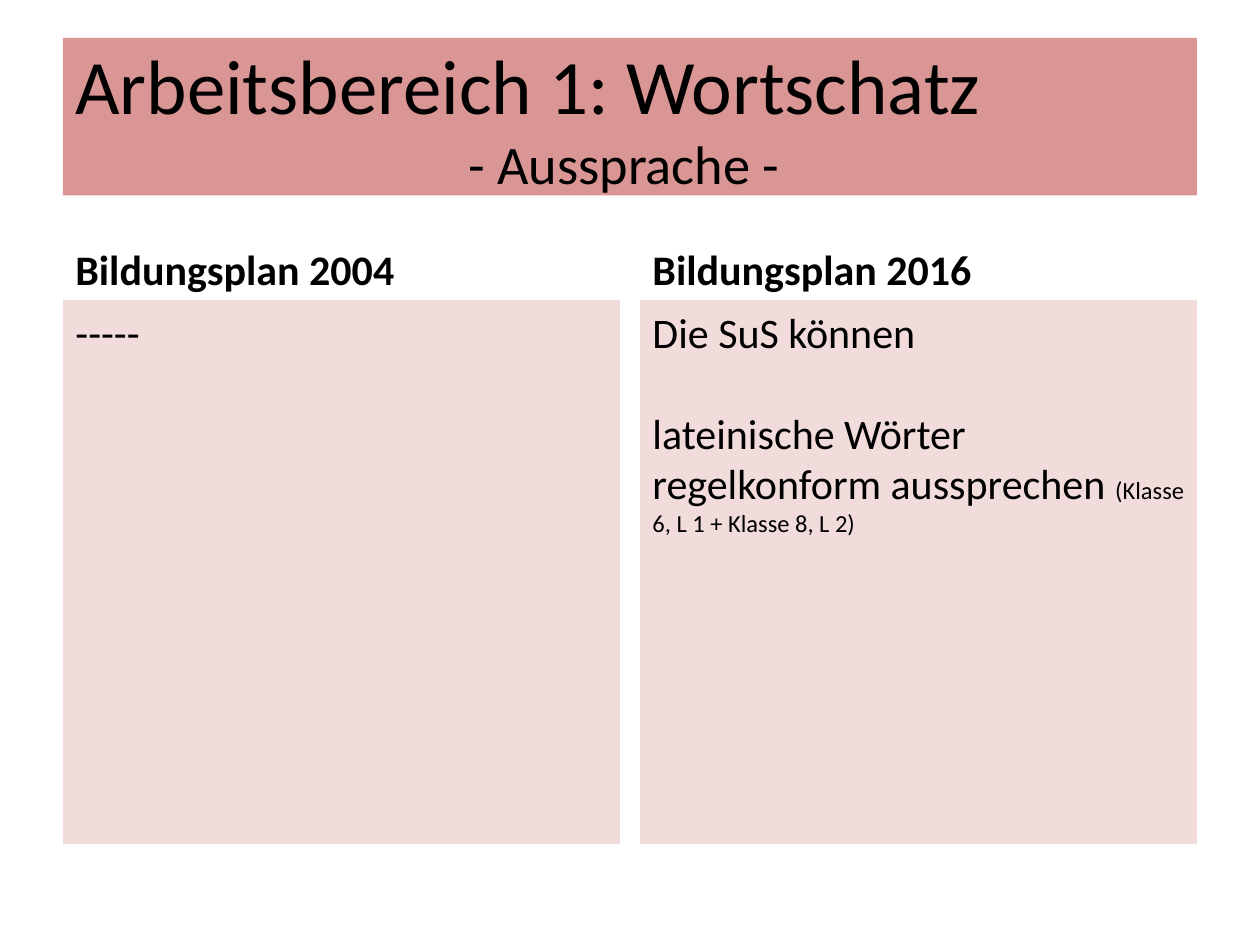
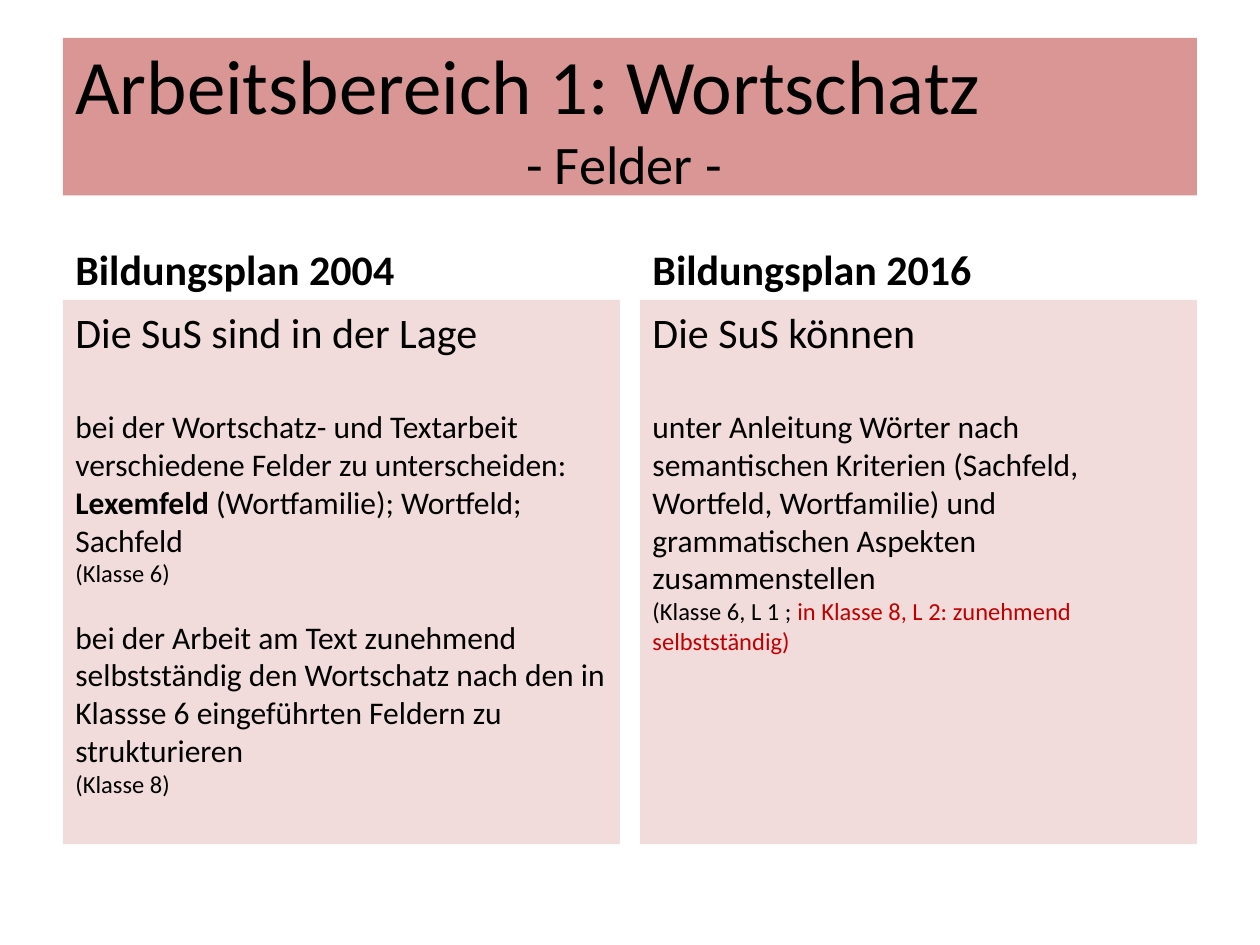
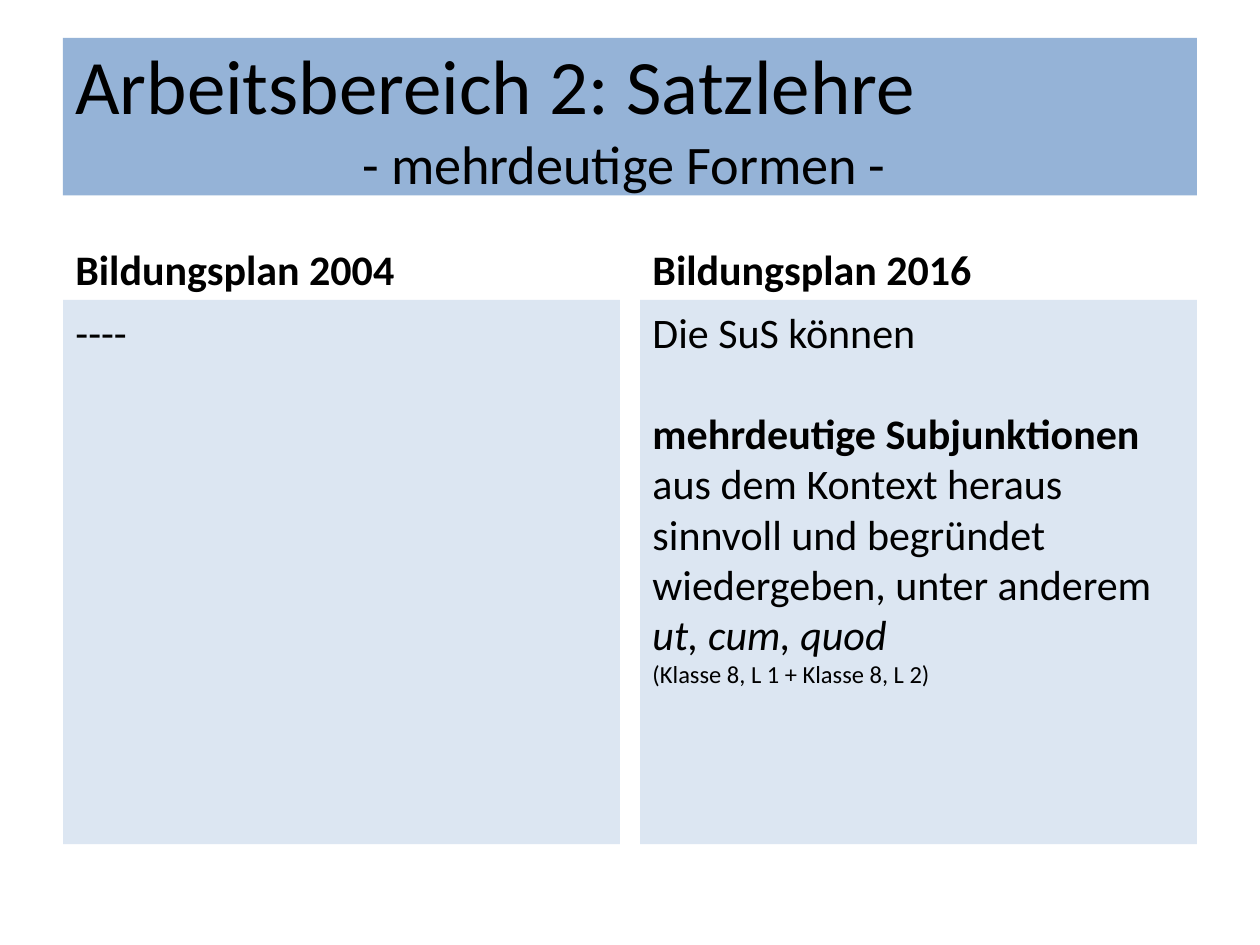
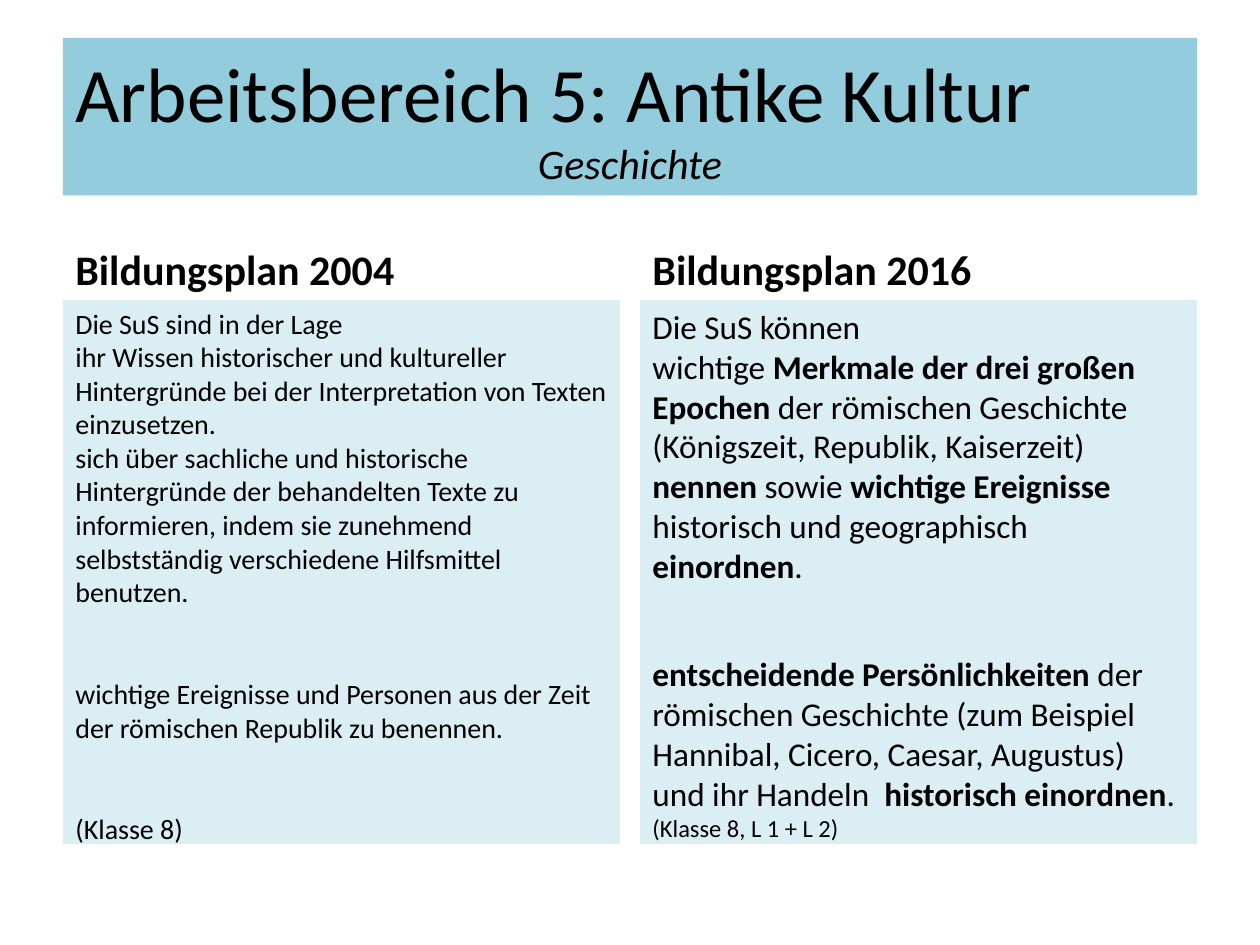
from dataclasses import dataclass
from typing import NamedTuple

from pptx import Presentation
from pptx.dml.color import RGBColor
from pptx.enum.shapes import MSO_SHAPE
from pptx.enum.text import MSO_ANCHOR, PP_ALIGN
from pptx.util import Inches, Pt

FONT = "Calibri"
COLORS = {
    "text": "000000",
    "accent": "C00000",
    "red band": "D99694",
    "red panel": "F2DCDB",
    "blue band": "95B3D7",
    "blue panel": "DCE6F2",
    "aqua band": "93CDDD",
    "aqua panel": "DBEEF4",
}
PLANS = ("Bildungsplan 2004", "Bildungsplan 2016")

MARGIN = 0.5
BAND_TOP, BAND_WIDTH, BAND_HEIGHT = 0.3, 9, 1.25
COLUMN_WIDTH, COLUMN_STEP = 4.42, 4.58
HEADING_TOP, HEADING_HEIGHT = 1.68, 0.7
PANEL_TOP, PANEL_HEIGHT = 2.38, 4.32

# Space in points that sets apart sections of a panel
INTRO_GAP, NOTE_GAP, SECTION_GAP = 29, 17, 39
NOTE_SIZE = 14


class Span(NamedTuple):
    text: str
    size: float | None = None
    bold: bool = False
    italic: bool = False
    color: str = "text"


@dataclass
class Line:
    """A paragraph; spans without a size of their own take the line's size."""
    size: float
    spans: list[Span]
    gap: float = 0
    align: PP_ALIGN = PP_ALIGN.LEFT


@dataclass
class Comparison:
    theme: str
    area: str
    topic: Line
    panels: tuple[list[Line], list[Line]]


def plain(size: float, text: str, gap: float = 0) -> Line:
    return Line(size, [Span(text)], gap)


def topic(text: str, size: float = 31, italic: bool = False) -> Line:
    return Line(size, [Span(text, italic=italic)], align=PP_ALIGN.CENTER)


def write(frame, lines: list[Line], anchor: MSO_ANCHOR) -> None:
    frame.word_wrap = True
    frame.vertical_anchor = anchor
    for index, line in enumerate(lines):
        paragraph = frame.add_paragraph() if index else frame.paragraphs[0]
        paragraph.alignment = line.align
        paragraph.space_before = Pt(line.gap)
        for span in line.spans:
            run = paragraph.add_run()
            run.text = span.text
            run.font.name = FONT
            run.font.size = Pt(span.size or line.size)
            run.font.bold = span.bold
            run.font.italic = span.italic
            run.font.color.rgb = RGBColor.from_string(COLORS[span.color])


def add_block(slide, left: float, top: float, width: float, height: float,
              color: str, lines: list[Line], anchor: MSO_ANCHOR) -> None:
    """Draw a filled rectangle that holds text."""
    block = slide.shapes.add_shape(
        MSO_SHAPE.RECTANGLE, Inches(left), Inches(top), Inches(width), Inches(height))
    block.shadow.inherit = False
    block.fill.solid()
    block.fill.fore_color.rgb = RGBColor.from_string(COLORS[color])
    block.line.fill.background()
    write(block.text_frame, lines, anchor)


def add_comparison(presentation, comparison: Comparison) -> None:
    slide = presentation.slides.add_slide(presentation.slide_layouts[6])
    add_block(slide, MARGIN, BAND_TOP, BAND_WIDTH, BAND_HEIGHT, f"{comparison.theme} band",
              [plain(44, comparison.area), comparison.topic], MSO_ANCHOR.MIDDLE)
    for column, (plan, lines) in enumerate(zip(PLANS, comparison.panels)):
        left = MARGIN + column * COLUMN_STEP
        heading = slide.shapes.add_textbox(
            Inches(left), Inches(HEADING_TOP), Inches(COLUMN_WIDTH), Inches(HEADING_HEIGHT))
        write(heading.text_frame, [Line(24, [Span(plan, bold=True)])], MSO_ANCHOR.BOTTOM)
        add_block(slide, left, PANEL_TOP, COLUMN_WIDTH, PANEL_HEIGHT,
                  f"{comparison.theme} panel", lines, MSO_ANCHOR.TOP)


COMPARISONS = [
    Comparison("red", "Arbeitsbereich 1: Wortschatz", topic("- Aussprache - "), (
        [plain(24, "-----")],
        [
            plain(24, "Die SuS können"),
            Line(24, [
                Span("lateinische Wörter regelkonform aussprechen "),
                Span("(Klasse 6, L 1 + Klasse 8, L 2)", NOTE_SIZE),
            ], INTRO_GAP),
        ],
    )),
    Comparison("red", "Arbeitsbereich 1: Wortschatz", topic("- Felder - "), (
        [
            plain(24, "Die SuS sind in der Lage"),
            plain(18, "bei der Wortschatz- und Textarbeit verschiedene Felder "
                      "zu unterscheiden:", INTRO_GAP),
            Line(18, [
                Span("Lexemfeld ", bold=True),
                Span("(Wortfamilie); Wortfeld; Sachfeld "),
            ]),
            plain(NOTE_SIZE, "(Klasse 6)"),
            plain(18, "bei der Arbeit am Text zunehmend selbstständig den Wortschatz nach "
                      "den in Klassse 6 eingeführten Feldern zu strukturieren ", NOTE_GAP),
            plain(NOTE_SIZE, "(Klasse 8)"),
        ],
        [
            plain(24, "Die SuS können"),
            plain(18, "unter Anleitung Wörter nach semantischen Kriterien (Sachfeld, "
                      "Wortfeld, Wortfamilie) und grammatischen Aspekten "
                      "zusammenstellen", INTRO_GAP),
            Line(NOTE_SIZE, [
                Span("(Klasse 6, L 1 ; "),
                Span("in Klasse 8, L 2: zunehmend selbstständig)", color="accent"),
            ]),
        ],
    )),
    Comparison("blue", "Arbeitsbereich 2: Satzlehre", topic("- mehrdeutige Formen - "), (
        [plain(24, "----")],
        [
            plain(24, "Die SuS können"),
            Line(24, [
                Span("mehrdeutige Subjunktionen ", bold=True),
                Span("aus dem Kontext heraus sinnvoll und begründet wiedergeben, "
                     "unter anderem "),
                Span("ut, cum, quod", italic=True),
            ], INTRO_GAP),
            plain(NOTE_SIZE, "(Klasse 8, L 1 + Klasse 8, L 2)"),
        ],
    )),
    Comparison("aqua", "Arbeitsbereich 5: Antike Kultur", topic("Geschichte", 24, True), (
        [
            plain(16, "Die SuS sind in der Lage"),
            plain(16, "ihr Wissen historischer und kultureller Hintergründe bei der "
                      "Interpretation von Texten einzusetzen."),
            plain(16, "sich über sachliche und historische Hintergründe der behandelten "
                      "Texte zu informieren, indem sie zunehmend selbstständig "
                      "verschiedene Hilfsmittel benutzen."),
            plain(16, "wichtige Ereignisse und Personen aus der Zeit der römischen "
                      "Republik zu benennen.", SECTION_GAP),
            plain(16, "(Klasse 8)", SECTION_GAP),
        ],
        [
            plain(19, "Die SuS können"),
            Line(19, [
                Span("wichtige "),
                Span("Merkmale der drei großen Epochen ", bold=True),
                Span("der römischen Geschichte (Königszeit, Republik, Kaiserzeit) "),
                Span("nennen", bold=True),
                Span(" sowie "),
                Span("wichtige Ereignisse ", bold=True),
                Span("historisch und geographisch "),
                Span("einordnen", bold=True),
                Span("."),
            ]),
            Line(19, [
                Span("entscheidende Persönlichkeiten ", bold=True),
                Span("der römischen Geschichte (zum Beispiel Hannibal, Cicero, Caesar, "
                     "Augustus) und ihr Handeln  "),
                Span("historisch einordnen", bold=True),
                Span("."),
            ], SECTION_GAP),
            plain(NOTE_SIZE, "(Klasse 8, L 1 + L 2)"),
        ],
    )),
]


def main() -> None:
    presentation = Presentation()
    presentation.slide_width = Inches(10)
    presentation.slide_height = Inches(7.5)
    for comparison in COMPARISONS:
        add_comparison(presentation, comparison)
    presentation.save("out.pptx")


if __name__ == "__main__":
    main()
